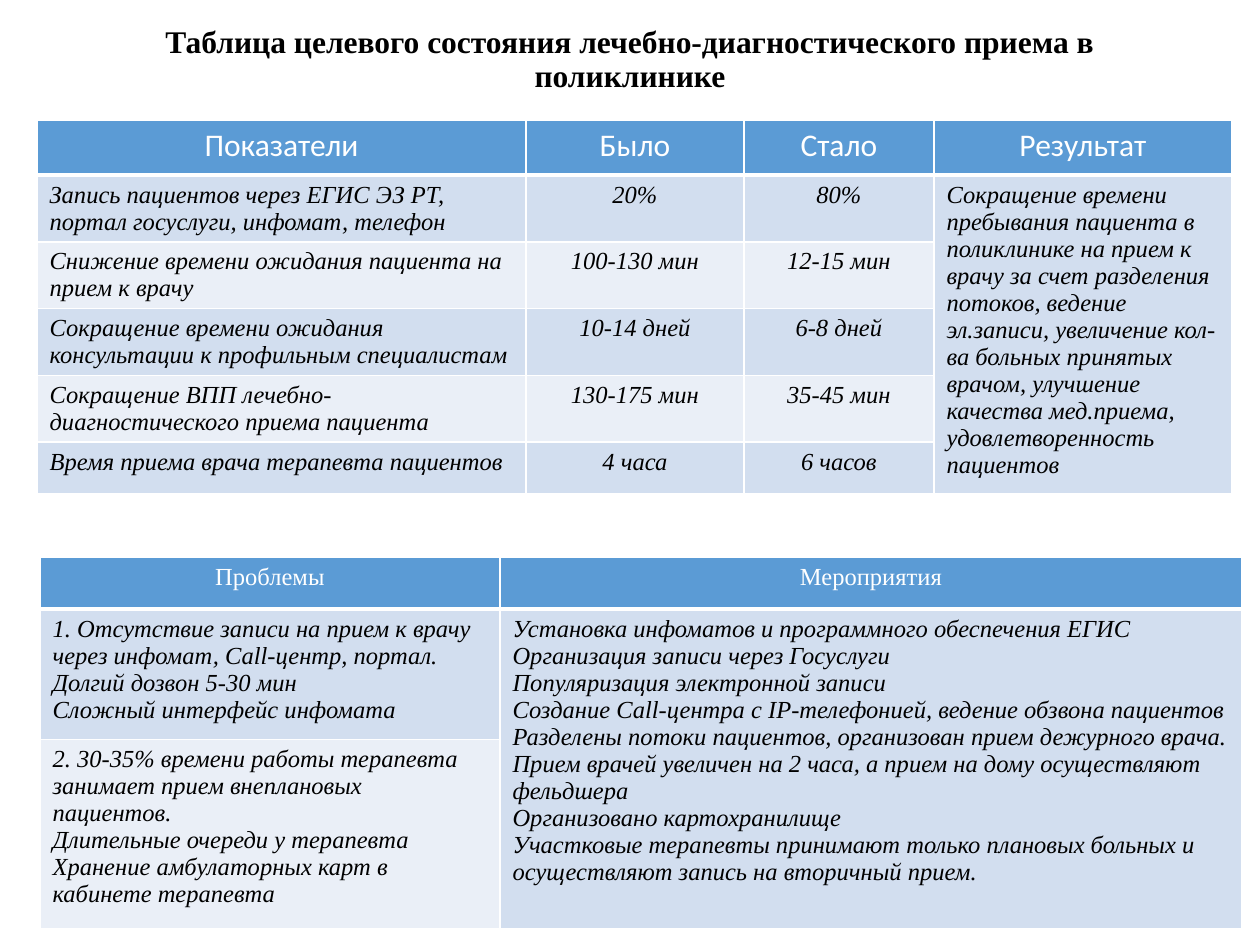
"""Build the slide with target indicators and a problems-and-measures table."""
from lxml import etree
from pptx import Presentation
from pptx.dml.color import RGBColor
from pptx.enum.text import MSO_ANCHOR, PP_ALIGN
from pptx.oxml.ns import qn
from pptx.util import Emu, Pt

CENTER, LEFT, MIDDLE = PP_ALIGN.CENTER, PP_ALIGN.LEFT, MSO_ANCHOR.MIDDLE
PX = 914400 // 126
SERIF = "Times New Roman"
HEADER_FILL, BAND_FILLS = "5B9BD5", ("D2DEEF", "EAEFF7")
BODY_FORMAT = {"name": SERIF, "size": Pt(14), "italic": True, "bold": False}

TITLE = "Таблица целевого состояния лечебно-диагностического приема в поликлинике"

INDICATORS = {
    "left": 37, "top": 120, "columns": (489, 218, 190, 298), "heights": (55, 52),
    "header": {"name": "Calibri", "size": Pt(18), "bold": False},
    "centered": (1, 2),
    "rows": [
        ("Показатели", "Было", "Стало", "Результат"),
        ("Запись пациентов через ЕГИС ЭЗ РТ, портал госуслуги, инфомат, телефон",
         "20%", "80%",
         "Сокращение времени пребывания пациента в поликлинике на прием к врачу за счет "
         "разделения потоков, ведение эл.записи, увеличение кол-ва больных принятых врачом, "
         "улучшение качества мед.приема, удовлетворенность пациентов"),
        ("Снижение времени ожидания пациента на прием к врачу", "100-130 мин", "12-15 мин"),
        ("Сокращение времени ожидания консультации к профильным специалистам",
         "10-14 дней", "6-8 дней"),
        ("Сокращение ВПП лечебно-диагностического приема пациента",
         "130-175 мин", "35-45 мин"),
        ("Время приема врача терапевта пациентов", "4 часа", "6 часов"),
    ],
}

MEASURES = {
    "left": 40, "top": 557, "columns": (460, 742), "heights": (52, 52),
    "header": {"name": SERIF, "size": Pt(14), "bold": False},
    "centered": (),
    "rows": [
        ("Проблемы", "Мероприятия"),
        ("1. Отсутствие записи на прием к врачу через инфомат, Call-центр, портал.\n"
         "Долгий дозвон 5-30 мин\n"
         "Сложный интерфейс инфомата",
         "Установка инфоматов и программного обеспечения ЕГИС\n"
         "Организация записи через Госуслуги\n"
         "Популяризация электронной записи\n"
         "Создание Call-центра с IP-телефонией, ведение обзвона пациентов\n"
         "Разделены потоки пациентов, организован прием дежурного врача.\n"
         "Прием врачей увеличен на 2 часа, а прием на дому осуществляют фельдшера\n"
         "Организовано картохранилище\n"
         "Участковые терапевты принимают только плановых больных и осуществляют "
         "запись на вторичный прием."),
        ("2. 30-35% времени работы терапевта занимает прием внеплановых пациентов.\n"
         "Длительные очереди у терапевта\n"
         "Хранение амбулаторных карт в кабинете терапевта",),
    ],
}


def px(value):
    return Emu(value * PX)


def color(value):
    return RGBColor.from_string(value)


def write_text(frame, text, alignment, font_format, font_color):
    frame.text = text
    for paragraph in frame.paragraphs:
        paragraph.alignment = alignment
        for name, value in font_format.items():
            setattr(paragraph.font, name, value)
        paragraph.font.color.rgb = color(font_color)


def set_borders(cell, bottom_width):
    properties = cell._tc.get_or_add_tcPr()
    for side, width in (("L", 1), ("R", 1), ("T", 1), ("B", bottom_width)):
        line = etree.SubElement(properties, qn(f"a:ln{side}"), w=str(Pt(width)))
        fill = etree.SubElement(line, qn("a:solidFill"))
        etree.SubElement(fill, qn("a:srgbClr"), val="FFFFFF")


def add_filled_table(slide, content):
    rows, columns = content["rows"], content["columns"]
    header_height, body_height = content["heights"]
    last = len(columns) - 1
    total_height = header_height + body_height * (len(rows) - 1)
    table = slide.shapes.add_table(
        len(rows), len(columns), px(content["left"]), px(content["top"]),
        px(sum(columns)), px(total_height)).table
    for column, width in zip(table.columns, columns):
        column.width = px(width)
    for row_index, texts in enumerate(rows):
        is_header = row_index == 0
        table.rows[row_index].height = px(header_height if is_header else body_height)
        for column_index in range(len(columns)):
            cell = table.cell(row_index, column_index)
            set_borders(cell, 3 if is_header else 1)
            band = 0 if column_index == last else (row_index - 1) % 2
            cell.fill.solid()
            cell.fill.fore_color.rgb = color(HEADER_FILL if is_header else BAND_FILLS[band])
            if column_index < len(texts):
                centered = is_header or column_index in content["centered"]
                write_text(cell.text_frame, texts[column_index],
                           CENTER if centered else LEFT,
                           content["header"] if is_header else BODY_FORMAT,
                           "FFFFFF" if is_header else "000000")
    table.cell(1, last).merge(table.cell(len(rows) - 1, last))


def add_title(slide):
    frame = slide.shapes.add_textbox(px(87), px(0), px(1086), px(120)).text_frame
    frame.word_wrap = True
    frame.vertical_anchor = MIDDLE
    write_text(frame, TITLE, CENTER, {"name": SERIF, "size": Pt(18), "bold": True}, "000000")
    frame.paragraphs[0].line_spacing = 0.9


def main():
    presentation = Presentation()
    presentation.slide_width, presentation.slide_height = px(1260), px(945)
    slide = presentation.slides.add_slide(presentation.slide_layouts[6])
    add_filled_table(slide, INDICATORS)
    add_title(slide)
    add_filled_table(slide, MEASURES)
    presentation.save("out.pptx")


if __name__ == "__main__":
    main()
